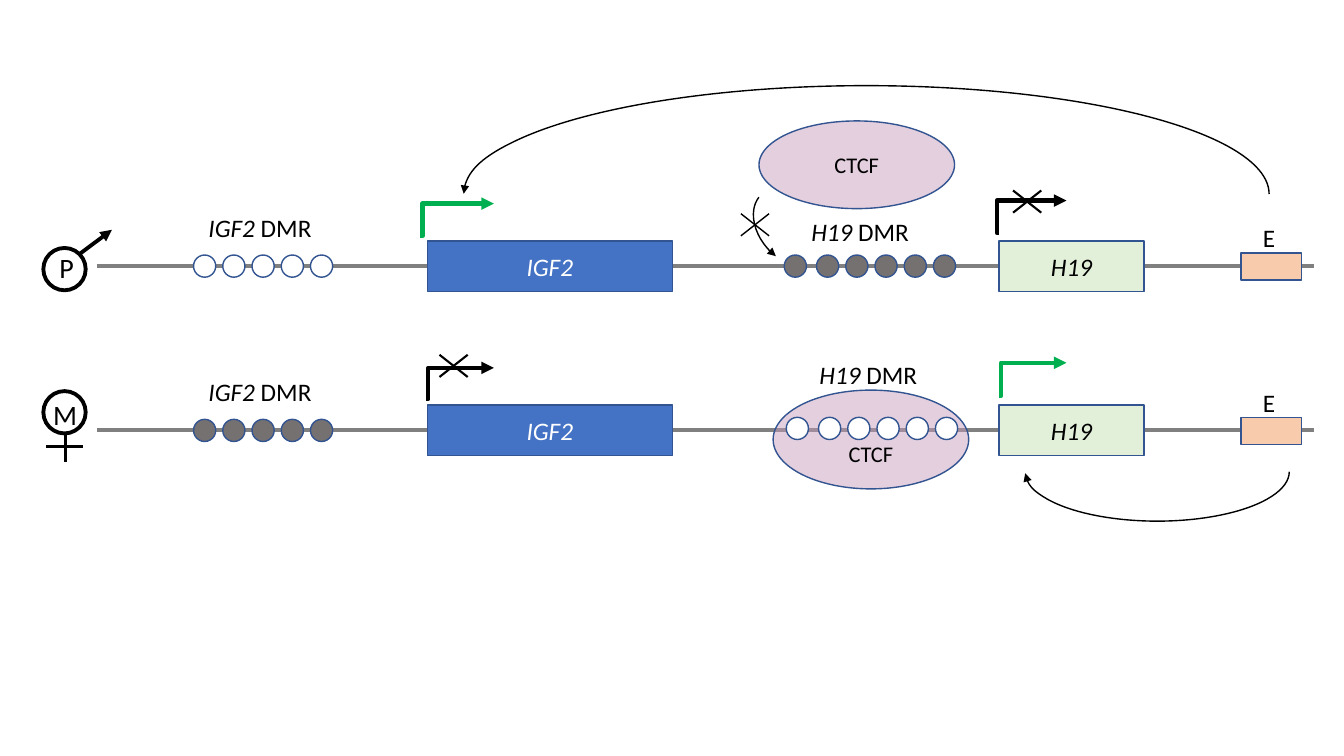
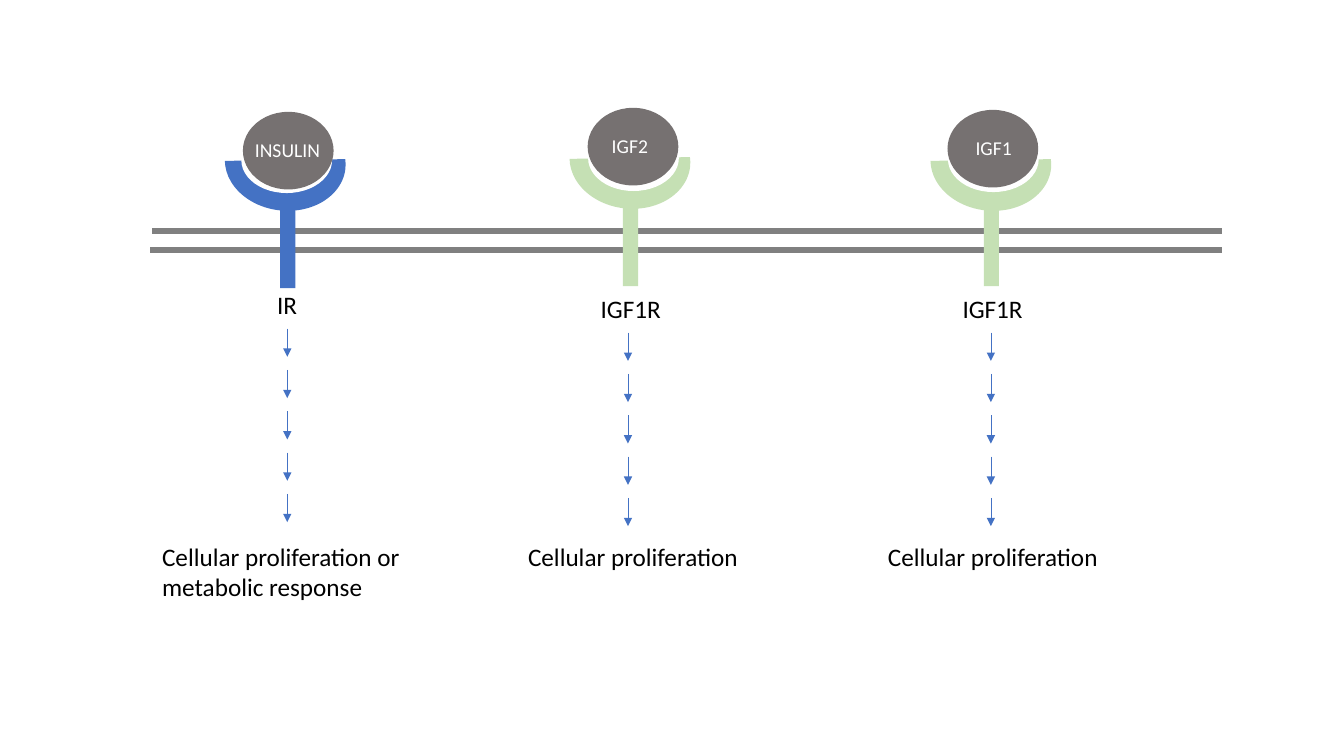
"""Two slides on IGF2/H19 imprinting and on insulin and IGF receptor signalling."""
from lxml import etree
from pptx import Presentation
from pptx.dml.color import RGBColor
from pptx.enum import shapes, text
from pptx.oxml import ns
from pptx.util import Inches, Pt

CELL = Inches(0.1)
COLUMNS, ROWS = 133.33, 75
FONT = "Calibri"
BLACK = RGBColor(0x00, 0x00, 0x00)
WHITE = RGBColor(0xFF, 0xFF, 0xFF)
BLUE = RGBColor(0x44, 0x72, 0xC4)
NAVY = RGBColor(0x32, 0x54, 0x91)
GRAY = RGBColor(0x80, 0x80, 0x80)
DARK_GRAY = RGBColor(0x76, 0x71, 0x71)
GREEN = RGBColor(0x00, 0xB0, 0x50)
PALE_GREEN = RGBColor(0xE2, 0xF0, 0xD9)
SOFT_GREEN = RGBColor(0xC5, 0xE0, 0xB4)
PEACH = RGBColor(0xF8, 0xCB, 0xAD)
MAUVE = RGBColor(0xC4, 0x9A, 0xBA)
SHAPE = shapes.MSO_SHAPE
LINK = shapes.MSO_CONNECTOR


def draw(slide, kind, box, fill=None, edge=None, weight=1, runs=(), size=18, ink=BLACK, wrap=True):
    """Place a preset shape, or a text box when kind is None, on the cell grid."""
    area = [round(length * CELL) for length in box]
    if kind is None:
        item = slide.shapes.add_textbox(*area)
    else:
        item = slide.shapes.add_shape(kind, *area)
        item.shadow.inherit = False
        if fill is None:
            item.fill.background()
        else:
            item.fill.solid()
            item.fill.fore_color.rgb = fill
        if edge is None:
            item.line.fill.background()
        else:
            item.line.color.rgb = edge
            item.line.width = Pt(weight)
    if runs:
        frame = item.text_frame
        frame.word_wrap = wrap
        paragraph = frame.paragraphs[0]
        if kind is None:
            frame.auto_size = text.MSO_AUTO_SIZE.SHAPE_TO_FIT_TEXT
        else:
            frame.vertical_anchor = text.MSO_ANCHOR.MIDDLE
            paragraph.alignment = text.PP_ALIGN.CENTER
        for words, italic in runs:
            run = paragraph.add_run()
            run.text = words
            run.font.name = FONT
            run.font.size = Pt(size)
            run.font.italic = italic
            run.font.color.rgb = ink
    return item


def connect(slide, start, end, color, weight, arrow=False, bend=None):
    """Draw a straight line, or an elbow when bend is given, between two grid points."""
    kind = LINK.STRAIGHT if bend is None else LINK.ELBOW
    link = slide.shapes.add_connector(kind, *(round(length * CELL) for length in (*start, *end)))
    link.line.color.rgb = color
    link.line.width = Pt(weight)
    properties = link.element.spPr
    if arrow:
        etree.SubElement(properties.find(ns.qn("a:ln")), ns.qn("a:tailEnd"), type="triangle")
    if bend is not None:
        guides = properties.find(ns.qn("a:prstGeom")).find(ns.qn("a:avLst"))
        etree.SubElement(guides, ns.qn("a:gd"), name="adj1", fmla=f"val {round(bend * 100000)}")
    etree.SubElement(properties, ns.qn("a:effectLst"))


deck = Presentation()
deck.slide_width = round(COLUMNS * CELL)
deck.slide_height = ROWS * CELL
blank = deck.slide_layouts[6]

imprinting = deck.slides.add_slide(blank)
SITE = 2.2
SITE_STEP = 2.9
alleles = [
    dict(strand=26.4, igf2_sites=WHITE, h19_sites=DARK_GRAY, h19_start=77.8, h19_top=25.3,
         h19_label=(79.5, 21), ctcf=(75.3, 12, 19.4, 8.7), ctcf_drop=0,
         parent="P", sign_top=24.6, letter=(4.9, 24.4, 3.5, 4.4)),
    dict(strand=42.7, igf2_sites=DARK_GRAY, h19_sites=WHITE, h19_start=78, h19_top=41.4,
         h19_label=(80.3, 35.2), ctcf=(76.7, 38.7, 19.4, 9.8), ctcf_drop=2.7,
         parent="M", sign_top=38.8, letter=(4.3, 38.9, 4.4, 4.4)),
]
for allele in alleles:
    strand = allele["strand"]
    connect(imprinting, (9.6, strand), (130.4, strand), GRAY, 3)
    for gene, left, width, fill, ink in (("IGF2", 42.4, 24.3, BLUE, WHITE),
                                         ("H19", 99.1, 14.4, PALE_GREEN, BLACK)):
        draw(imprinting, SHAPE.RECTANGLE, (left, strand - 2.5, width, 5), fill, NAVY,
             runs=[(gene, True)], ink=ink)
    draw(imprinting, SHAPE.RECTANGLE, (123.1, strand - 1.3, 6, 2.7), PEACH, NAVY)
    draw(imprinting, None, (124.3, strand - 4.8, 3.2, 4), runs=[("E", False)], wrap=False)

    ctcf = draw(imprinting, SHAPE.OVAL, allele["ctcf"], MAUVE, NAVY, runs=[("CTCF", False)], size=16)
    ctcf.text_frame.margin_top = round((0.5 + allele["ctcf_drop"]) * CELL)
    tint = ctcf.element.spPr.find(ns.qn("a:solidFill"))[0]
    etree.SubElement(tint, ns.qn("a:alpha"), val="47000")

    for site in range(5):
        draw(imprinting, SHAPE.OVAL, (19.2 + site * SITE_STEP, strand - 1.1, SITE, SITE),
             allele["igf2_sites"], NAVY)
    for site in range(6):
        extra = 0.3 if site else 0
        draw(imprinting, SHAPE.OVAL,
             (allele["h19_start"] + site * SITE_STEP + extra, allele["h19_top"], SITE, SITE),
             allele["h19_sites"], NAVY)
    for gene, place, width in (("IGF2", (19.7, strand - 5.85), 12.3),
                               ("H19", allele["h19_label"], 11.8)):
        draw(imprinting, None, (*place, width, 4), runs=[(gene, True), (" DMR", False)], wrap=False)

    draw(imprinting, SHAPE.OVAL, (4.3, allele["sign_top"], 4.2, 4.2), WHITE, BLACK, 2.75)
    draw(imprinting, None, allele["letter"], runs=[(allele["parent"], False)], size=20, wrap=False)

connect(imprinting, (7.9, 25.2), (11.1, 22.8), BLACK, 2.75, arrow=True)
connect(imprinting, (4.6, 44.3), (8.2, 44.3), BLACK, 2.5)
connect(imprinting, (6.5, 45.8), (6.5, 43), BLACK, 2.5)

for start, end, color, bend in (
    ((41.7, 23.4), (49, 20.2), GREEN, 0.03),
    ((99.1, 39.3), (105.8, 36), GREEN, 0.03),
    ((42.3, 39.6), (49, 36.5), BLACK, 0.03),
    ((99.1, 23.1), (105.8, 19.9), BLACK, -0.03),
):
    connect(imprinting, start, end, color, 3, arrow=True, bend=bend)

for x, y, weight in ((101.9, 20, 1.5), (45, 36.3, 1.5), (74.9, 22.3, 1)):
    for rise in (-1.1, 1.1):
        connect(imprinting, (x - 1.4, y - rise), (x + 1.4, y + rise), BLACK, weight)

for box, sweep, turn, flipped in (
    ((46, 8.5, 79.9, 21.5), (108.02, 0), 0, False),
    ((101.7, 41.9, 26.2, 9.8), (108.38, 0), 0, True),
    ((74.1, 19.4, 8.8, 6.3), (149.93, 212.86), 228.2, False),
):
    loop = draw(imprinting, SHAPE.ARC, box, edge=BLACK)
    loop.adjustments[0], loop.adjustments[1] = sweep
    loop.rotation = turn
    if flipped:
        loop.element.spPr.find(ns.qn("a:xfrm")).set("flipV", "1")
    etree.SubElement(loop.element.spPr.find(ns.qn("a:ln")), ns.qn("a:headEnd"), type="triangle")

signalling = deck.slides.add_slide(blank)
for left, level in ((15.1, 22.9), (14.9, 24.8)):
    connect(signalling, (left, level), (121.2, level), GRAY, 4.5)

receptors = [
    dict(color=BLUE, cup=(23.5, 10.1), pocket=(25.2, 11.4), stem=(27.8, 20.6),
         ligand="INSULIN", ball=(24.1, 11.1), ligand_box=(24.3, 13.2, 8.5, 3.4),
         name="IR", name_box=(26.5, 28.2, 4, 4), cascade=(28.5, 32.6),
         outcome="Cellular proliferation or metabolic response",
         outcome_box=(15.1, 53.2, 29.7, 7.1), wrap=True),
    dict(color=SOFT_GREEN, cup=(57.7, 9.9), pocket=(59.6, 11.2), stem=(61.8, 20.4),
         ligand="IGF2", ball=(58.3, 10.7), ligand_box=(59.7, 12.8, 5.6, 3.4),
         name="IGF1R", name_box=(58.6, 28.6, 8.1, 4), cascade=(62.3, 33),
         outcome="Cellular proliferation", outcome_box=(51.4, 53.2, 23.1, 4), wrap=False),
    dict(color=SOFT_GREEN, cup=(93.5, 10.1), pocket=(95.3, 11.3), stem=(97.6, 20.4),
         ligand="IGF1", ball=(94, 10.9), ligand_box=(95.8, 13, 5.6, 3.4),
         name="IGF1R", name_box=(94.5, 28.6, 8.1, 4), cascade=(98.3, 33),
         outcome="Cellular proliferation", outcome_box=(87.1, 53.2, 23.1, 4), wrap=False),
]
for receptor in receptors:
    for place, size, fill, turn, sweep in (
        (receptor["cup"], (9.6, 12), receptor["color"], 275.7, (48.75, 159.41)),
        (receptor["pocket"], (6.5, 9), WHITE, 270, (45.99, 162)),
    ):
        bowl = draw(signalling, SHAPE.CHORD, (*place, *size), fill)
        bowl.rotation = turn
        bowl.adjustments[0], bowl.adjustments[1] = sweep
    draw(signalling, SHAPE.RECTANGLE, (*receptor["stem"], 1.5, 8), receptor["color"])
    draw(signalling, SHAPE.OVAL, (*receptor["ball"], 9, 7.7), DARK_GRAY)
    draw(signalling, None, receptor["ligand_box"], runs=[(receptor["ligand"], False)],
         size=14, ink=WHITE, wrap=False)
    draw(signalling, None, receptor["name_box"], runs=[(receptor["name"], False)], wrap=False)
    x, top = receptor["cascade"]
    for step in range(5):
        y = top + step * 4.1
        connect(signalling, (x, y), (x, y + 2.8), BLUE, 0.5, arrow=True)
    draw(signalling, None, receptor["outcome_box"], runs=[(receptor["outcome"], False)],
         wrap=receptor["wrap"])

deck.save("out.pptx")
